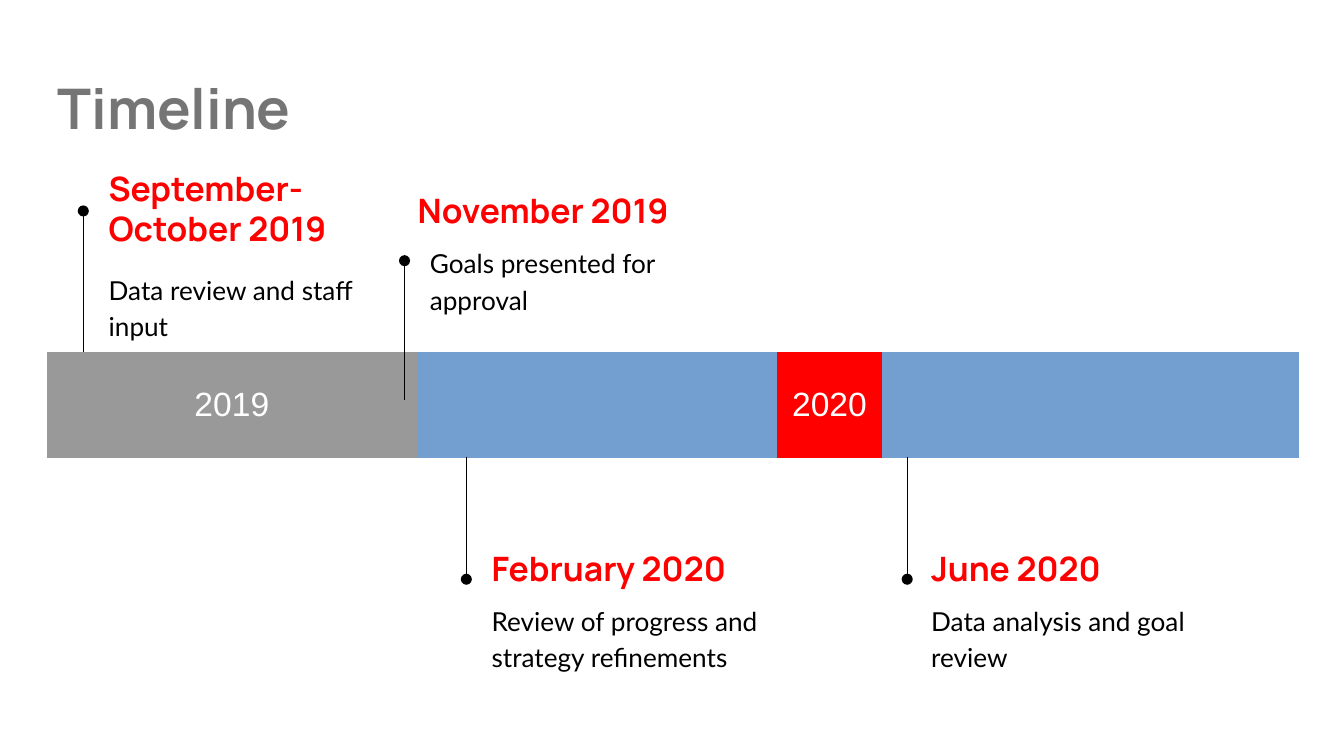
"""Build the goal review timeline slide."""
from lxml import etree
from pptx import Presentation
from pptx.dml.color import RGBColor
from pptx.enum.shapes import MSO_CONNECTOR
from pptx.enum.text import MSO_ANCHOR, MSO_AUTO_SIZE, PP_ALIGN
from pptx.oxml.ns import qn
from pptx.util import Inches, Pt

STRAIGHT = MSO_CONNECTOR.STRAIGHT
TOP, MIDDLE = MSO_ANCHOR.TOP, MSO_ANCHOR.MIDDLE
LEFT, CENTER = PP_ALIGN.LEFT, PP_ALIGN.CENTER
NO_FIT = MSO_AUTO_SIZE.NONE

TITLE = ("Timeline", (0.33, 0.45, 9.32, 0.7))
MILESTONES = [
    {"date": "September- October 2019", "date_box": (0.71, 1.25, 2.53, 0.6),
     "note": "Data review and staff input", "note_box": (0.71, 1.91, 2.02, 0.63),
     "stem": (0.62, 2.62, 1.57)},
    {"date": "February 2020", "date_box": (3.56, 4.01, 2.53, 0.43),
     "note": "Review of progress and strategy refinements", "note_box": (3.56, 4.37, 2.53, 0.63),
     "stem": (3.47, 3.4, 4.31)},
    {"date": "November 2019", "date_box": (3.01, 1.35, 2.16, 0.43),
     "note": "Goals presented for approval", "note_box": (3.1, 1.71, 2.07, 0.63),
     "stem": (3.01, 2.98, 1.94)},
    {"date": "June 2020", "date_box": (6.83, 4.01, 2.57, 0.43),
     "note": "Data analysis and goal review", "note_box": (6.83, 4.37, 2.57, 0.63),
     "stem": (6.75, 3.4, 4.31)},
]
BAND = (0.35, 2.62, 9.32, 0.79)
COLUMNS = 12
ODD_WIDTHS = {3: 0.42, 4: 1.13}
YEARS = [("2019", 4, "past", "past"), ("2020", 8, "accent", "future")]

THEME = {
    "colors": {"past": "999999", "future": "729FCF", "accent": "FF0000", "line": "000000"},
    "title": {"name": "Manrope", "size": 30, "bold": True, "color": "757575"},
    "date": {"name": "Manrope", "size": 18, "bold": True, "color": "FF0000"},
    "note": {"name": "Lato", "size": 14, "bold": False, "color": "000000"},
    "year": {"name": "Arial", "size": 18, "bold": False, "color": "FFFFFF"},
    "line_width": 0.75,
}
FRAME = {"word_wrap": True, "auto_size": NO_FIT, **{
    f"margin_{side}": Inches(0.1) for side in ("left", "right", "top", "bottom")}}


def set_all(obj, values):
    for name, value in values.items():
        setattr(obj, name, value)


def write(tf, text, style, align=LEFT, spacing=1.0):
    p = tf.paragraphs[0]
    set_all(p, {"alignment": align, "line_spacing": spacing})
    r = p.add_run()
    r.text = text
    font = THEME[style]
    set_all(r.font, {"name": font["name"], "size": Pt(font["size"]), "bold": font["bold"]})
    r.font.color.rgb = RGBColor.from_string(font["color"])


def fill_frame(sp, text, style, anchor=TOP, spacing=1.0):
    set_all(sp.text_frame, {**FRAME, "vertical_anchor": anchor})
    write(sp.text_frame, text, style, spacing=spacing)


def add_text(s, box, *args):
    fill_frame(s.shapes.add_textbox(*map(Inches, box)), *args)


def paint(cell, color):
    cell.fill.solid()
    cell.fill.fore_color.rgb = RGBColor.from_string(THEME["colors"][color])
    tc_pr = cell._tc.get_or_add_tcPr()
    for side in ("L", "R", "T", "B"):
        border = etree.Element(qn(f"a:ln{side}"), w="0")
        etree.SubElement(border, qn("a:noFill"))
        tc_pr.insert(len(tc_pr) - 1, border)


def add_band(s):
    table = s.shapes.add_table(1, COLUMNS, *map(Inches, BAND)).table
    set_all(table, {"first_row": False, "horz_banding": False})
    width = (BAND[2] - sum(ODD_WIDTHS.values())) / (COLUMNS - len(ODD_WIDTHS))
    for i, column in enumerate(table.columns):
        column.width = Inches(ODD_WIDTHS.get(i, width))
    start = 0
    for year, span, color, rest in YEARS:
        for i in range(start, start + span):
            paint(table.cell(0, i), color if i == start else rest)
        cell = table.cell(0, start)
        cell.merge(table.cell(0, start + span - 1))
        set_all(cell, {"vertical_anchor": MIDDLE, "margin_left": Inches(0.1),
                       "margin_right": Inches(0.1), "margin_top": Inches(0.1),
                       "margin_bottom": Inches(0.1)})
        write(cell.text_frame, year, "year", CENTER)
        start += span


def add_stem(s, x, start, end):
    line = s.shapes.add_connector(STRAIGHT, *map(Inches, (x, start, x, end)))
    line.line.width = Pt(THEME["line_width"])
    line.line.color.rgb = RGBColor.from_string(THEME["colors"]["line"])
    etree.SubElement(line.line._get_or_add_ln(), qn("a:tailEnd"), type="oval")
    etree.SubElement(line._element.spPr, qn("a:effectLst"))


def main():
    prs = Presentation()
    set_all(prs, {"slide_width": Inches(10), "slide_height": Inches(10 * 9 / 16)})
    s = prs.slides.add_slide(prs.slide_layouts[5])
    text, box = TITLE
    title = s.shapes.title
    set_all(title, dict(zip(("left", "top", "width", "height"), map(Inches, box))))
    fill_frame(title, text, "title")
    add_band(s)
    for item in MILESTONES:
        add_stem(s, *item["stem"])
        add_text(s, item["date_box"], item["date"], "date", MIDDLE)
        add_text(s, item["note_box"], item["note"], "note", TOP, 1.15)
    prs.save("out.pptx")


if __name__ == "__main__":
    main()
